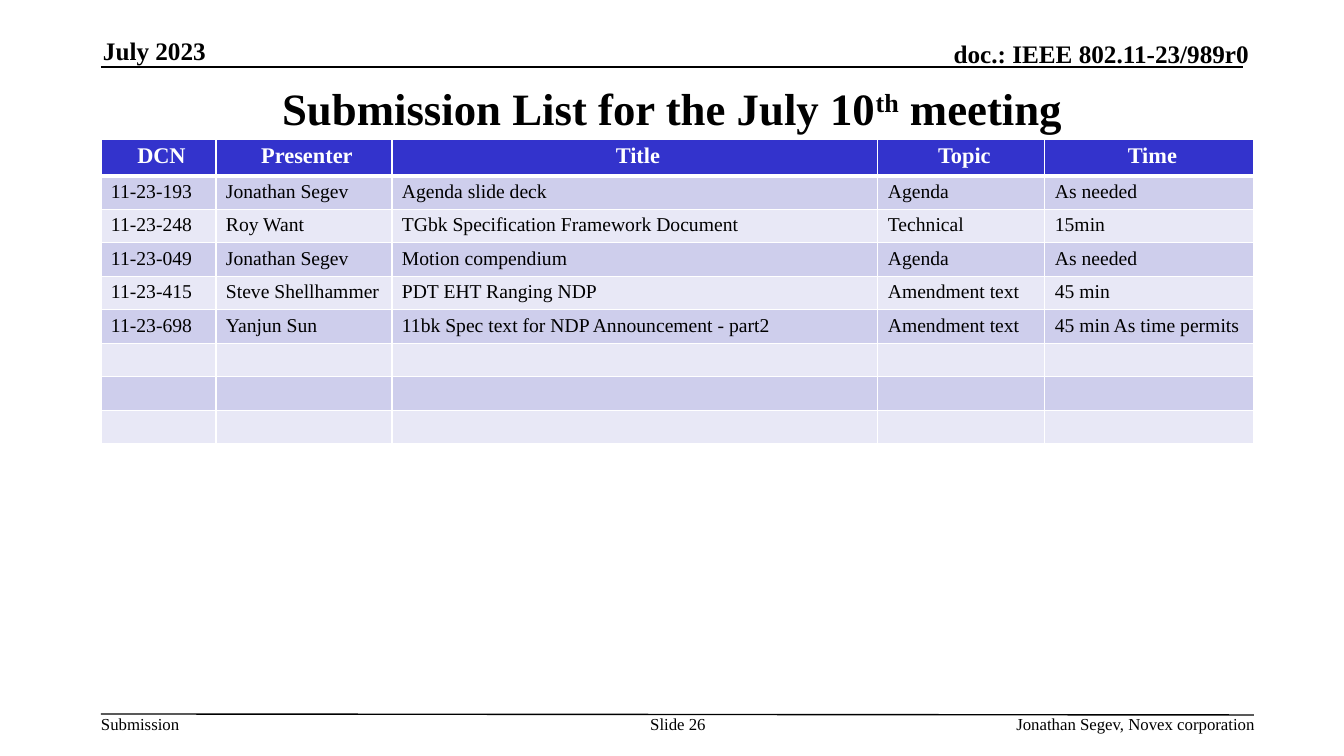
from lxml import etree
from pptx import Presentation
from pptx.dml.color import RGBColor
from pptx.enum.shapes import MSO_CONNECTOR
from pptx.enum.text import MSO_ANCHOR, MSO_AUTO_SIZE, PP_ALIGN
from pptx.oxml.ns import qn
from pptx.util import Pt

LEFT, CENTER, RIGHT = PP_ALIGN.LEFT, PP_ALIGN.CENTER, PP_ALIGN.RIGHT
TOP, MIDDLE, BOTTOM = MSO_ANCHOR.TOP, MSO_ANCHOR.MIDDLE, MSO_ANCHOR.BOTTOM
STRAIGHT = MSO_CONNECTOR.STRAIGHT
BLACK = RGBColor(0x00, 0x00, 0x00)
WHITE = RGBColor(0xFF, 0xFF, 0xFF)
BLUE = RGBColor(0x33, 0x33, 0xCC)
BANDS = RGBColor(0xE8, 0xE8, 0xF6), RGBColor(0xCE, 0xCE, 0xEC)
FONT = "Times New Roman"

TITLE = [("Submission List for the July 10", 0), ("th", 30000), (" meeting", 0)]
TITLE_BOX = (101, 76, 1142, 64)
LABELS = [
    ("July 2023", (103, 36, 275, 30), 18, True, LEFT, BOTTOM),
    ("doc.: IEEE 802.11-23/989r0", (735, 39, 514, 30), 18, True, RIGHT, BOTTOM),
    ("Submission", (101, 714, 80, 20), 12, False, LEFT, TOP),
    ("Slide 26", (639, 714, 78, 40), 12, False, CENTER, TOP),
    ("Jonathan Segev, Novex corporation", (787, 714, 468, 20), 12, False, RIGHT, TOP),
]
RULES = [(101, 67, 1243, 67), (101, 714, 1254, 715)]
HEADER = ("DCN", "Presenter", "Title", "Topic", "Time")
SUBMISSIONS = [
    ("11-23-193", "Jonathan Segev", "Agenda slide deck", "Agenda", "As needed"),
    ("11-23-248", "Roy Want", "TGbk Specification Framework Document", "Technical", "15min"),
    ("11-23-049", "Jonathan Segev", "Motion compendium", "Agenda", "As needed"),
    ("11-23-415", "Steve Shellhammer", "PDT EHT Ranging NDP", "Amendment text", "45 min"),
    ("11-23-698", "Yanjun Sun", "11bk Spec text for NDP Announcement - part2",
     "Amendment text", "45 min As time permits"),
]
EMPTY_ROWS = 3
COLUMNS = (115, 176, 486, 167, 209)
TABLE_LEFT, TABLE_TOP = 101, 139
HEADER_HEIGHT, ROW_HEIGHT = 34, 31


def px(*values):
    return [round(v * 914400 / 100.8) for v in values]


def assign(target, **values):
    for name, value in values.items():
        setattr(target, name, value)


def add_run(p, text, size, bold=False, color=BLACK):
    r = p.add_run()
    r.text = text
    assign(r.font, name=FONT, size=Pt(size), bold=bold)
    r.font.color.rgb = color
    return r


def add_border(cell, side, width):
    ln = etree.SubElement(cell._tc.get_or_add_tcPr(), qn(f"a:ln{side}"), w=str(Pt(width)))
    fill = etree.SubElement(ln, qn("a:solidFill"))
    etree.SubElement(fill, qn("a:srgbClr"), val=str(WHITE))


def fill_cell(cell, text, row):
    head = row == 0
    size = 16 if head else 14
    left, side, edge = px(10, 4 if head else 10, 5)
    assign(cell, margin_left=left, margin_right=side, margin_top=edge, margin_bottom=edge)
    for name, width in zip("LRTB", (1, 1, 3 if row == 1 else 1, 3 if head else 1)):
        add_border(cell, name, width)
    cell.fill.solid()
    cell.fill.fore_color.rgb = BLUE if head else BANDS[row % 2]
    p = cell.text_frame.paragraphs[0]
    p.alignment = CENTER if head else LEFT
    if text:
        add_run(p, text, size, head, WHITE if head else BLACK)
    else:
        end = etree.SubElement(p._p, qn("a:endParaRPr"), sz=str(size * 100))
        etree.SubElement(end, qn("a:latin"), typeface=FONT)


def add_label(shapes, text, box, size, bold, align, anchor):
    tf = shapes.add_textbox(*px(*box)).text_frame
    assign(tf, word_wrap=True, vertical_anchor=anchor,
           margin_left=0, margin_right=0, margin_top=0, margin_bottom=0)
    tf.paragraphs[0].alignment = align
    add_run(tf.paragraphs[0], text, size, bold)


def add_rule(shapes, ends):
    sp = shapes.add_connector(STRAIGHT, *px(*ends))
    sp.line.color.rgb = BLACK
    sp.line.width = Pt(1)
    etree.SubElement(sp._element.spPr, qn("a:effectLst"))


def add_title(sp):
    left, top, width, height = px(*TITLE_BOX)
    assign(sp, left=left, top=top, width=width, height=height)
    tf = sp.text_frame
    assign(tf, auto_size=MSO_AUTO_SIZE.NONE, word_wrap=True, vertical_anchor=MIDDLE)
    tf.paragraphs[0].alignment = CENTER
    for text, baseline in TITLE:
        r = add_run(tf.paragraphs[0], text, 32, True)
        if baseline:
            r.font._element.set("baseline", str(baseline))


def add_submissions(shapes):
    rows = [HEADER, *SUBMISSIONS] + [("",) * len(HEADER)] * EMPTY_ROWS
    heights = [HEADER_HEIGHT] + [ROW_HEIGHT] * (len(rows) - 1)
    box = px(TABLE_LEFT, TABLE_TOP, sum(COLUMNS), sum(heights))
    table = shapes.add_table(len(rows), len(HEADER), *box).table
    for column, width in zip(table.columns, px(*COLUMNS)):
        column.width = width
    for i, (values, height) in enumerate(zip(rows, px(*heights))):
        table.rows[i].height = height
        for j, text in enumerate(values):
            fill_cell(table.cell(i, j), text, i)


def main():
    prs = Presentation()
    prs.slide_width, prs.slide_height = px(1344, 756)
    shapes = prs.slides.add_slide(prs.slide_layouts[5]).shapes
    add_title(shapes.title)
    for ends in RULES:
        add_rule(shapes, ends)
    for label in LABELS:
        add_label(shapes, *label)
    add_submissions(shapes)
    prs.save("out.pptx")


if __name__ == "__main__":
    main()
